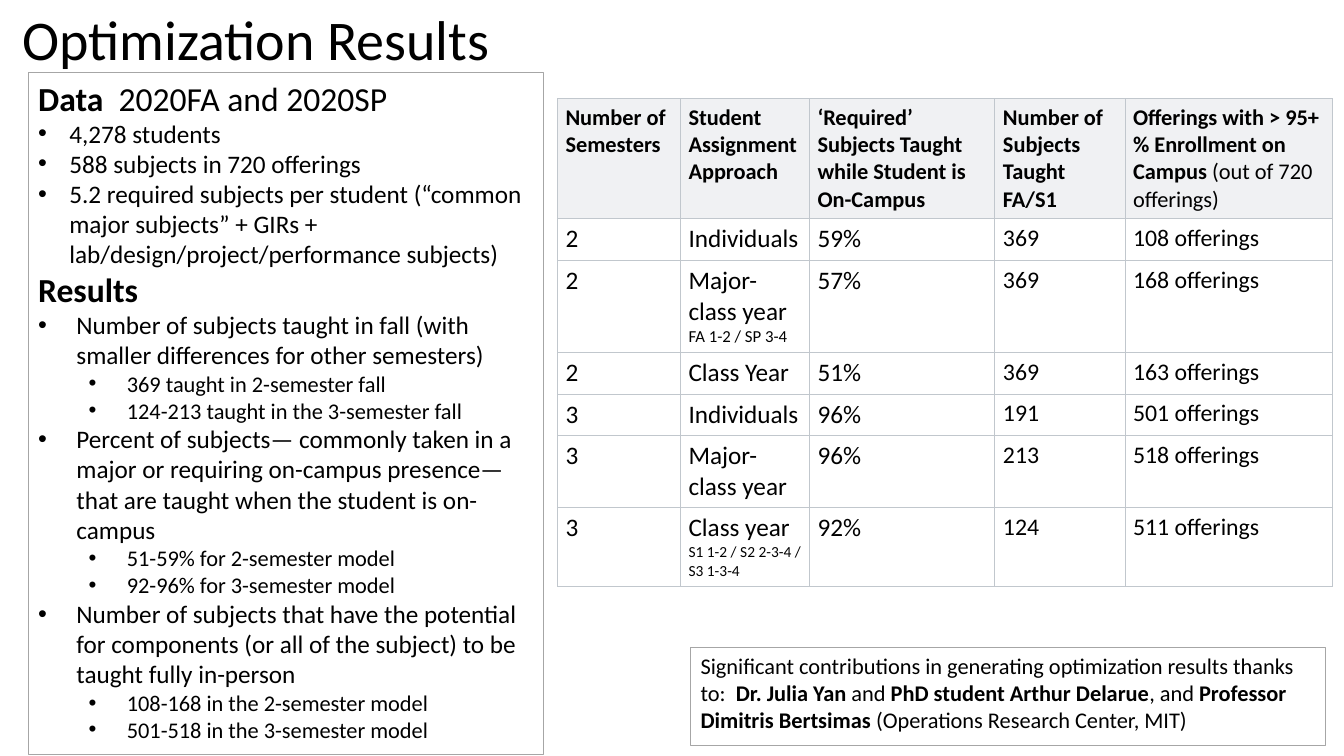
from dataclasses import dataclass

from lxml import etree
from pptx import Presentation
from pptx import util as u
from pptx.dml.color import RGBColor
from pptx.enum import shapes, text
from pptx.oxml import ns

INK = RGBColor(0x00, 0x00, 0x00)
EDGE = RGBColor(0xA6, 0xA6, 0xA6)
RULE = RGBColor(0xC1, 0xC7, 0xCD)
HEAD = RGBColor(0xF0, 0xF1, 0xF3)
FACE = "Calibri"
WIDE, HIGH = u.Inches(13.33), u.Inches(7.5)


@dataclass
class Box:
    """A place on the slide, in percent of its width and height."""
    x: float
    y: float
    w: float
    h: float

    def place(self) -> tuple:
        return across(self.x), down(self.y), across(self.w), down(self.h)


@dataclass
class Line:
    """A paragraph; ** marks switch bold on and off."""
    words: str
    size: float
    indent: float = 0
    hang: float = 0
    level: int = 0


def across(share: float) -> int:
    return round(WIDE * share / 100)


def down(share: float) -> int:
    return round(HIGH * share / 100)


def fact(words: str) -> Line:
    return Line(words, 18, 0.31, 0.31)


def point(words: str) -> Line:
    return Line(words, 18, 0.38, 0.38)


def detail(words: str) -> Line:
    return Line(words, 16, 0.88, 0.38, 1)


def write(frame, lines: list[Line]) -> None:
    frame.word_wrap = True
    for n, line in enumerate(lines):
        para = frame.paragraphs[0] if n == 0 else frame.add_paragraph()
        para.alignment = text.PP_ALIGN.LEFT
        para.level = line.level
        if line.hang:
            props = para._p.get_or_add_pPr()
            props.set("marL", str(u.Inches(line.indent)))
            props.set("indent", str(-u.Inches(line.hang)))
            etree.SubElement(props, ns.qn("a:buFont")).set("typeface", "Arial")
            etree.SubElement(props, ns.qn("a:buChar")).set("char", "•")
        font = para.font
        font.name, font.size = FACE, u.Pt(line.size)
        font.color.rgb = INK
        for k, part in enumerate(line.words.split("**")):
            if part:
                run = para.add_run()
                run.text = part
                run.font.bold = k % 2 == 1


def panel(slide, box: Box, lines: list[Line]) -> None:
    shape = slide.shapes.add_shape(shapes.MSO_SHAPE.RECTANGLE, *box.place())
    shape.shadow.inherit = False
    shape.fill.background()
    shape.line.color.rgb = EDGE
    shape.line.width = u.Pt(0.75)
    shape.text_frame.vertical_anchor = text.MSO_ANCHOR.TOP
    write(shape.text_frame, lines)


def border(cell) -> None:
    props = cell._tc.get_or_add_tcPr()
    for side in ("lnL", "lnR", "lnT", "lnB"):
        edge = etree.SubElement(props, ns.qn(f"a:{side}"), w=str(u.Pt(0.75)))
        fill = etree.SubElement(edge, ns.qn("a:solidFill"))
        etree.SubElement(fill, ns.qn("a:srgbClr")).set("val", str(RULE))


def grid(slide, box: Box, cols: list[float], rows: list[float],
         cells: list[list[list[Line]]]) -> None:
    table = slide.shapes.add_table(len(rows), len(cols), *box.place()).table
    table.first_row = table.horz_banding = False
    for col, share in zip(table.columns, cols):
        col.width = across(share)
    for row, share in zip(table.rows, rows):
        row.height = down(share)
    for r, row in enumerate(cells):
        for c, lines in enumerate(row):
            cell = table.cell(r, c)
            border(cell)
            if r == 0:
                cell.fill.solid()
                cell.fill.fore_color.rgb = HEAD
            else:
                cell.fill.background()
            cell.margin_left = cell.margin_right = u.Inches(0.08)
            cell.margin_top = cell.margin_bottom = u.Inches(0.05)
            write(cell.text_frame, lines)


# Findings on the left
FINDS = [
    Line("**Data  **2020FA and 2020SP", 24),
    fact("4,278 students"),
    fact("588 subjects in 720 offerings"),
    fact("5.2 required subjects per student (“common major subjects” + GIRs + "
         "lab/design/project/performance subjects)"),
    Line("**Results**", 24),
    point("Number of subjects taught in fall (with smaller differences for "
          "other semesters)"),
    detail("369 taught in 2-semester fall"),
    detail("124-213 taught in the 3-semester fall"),
    point("Percent of subjects— commonly taken in a major or requiring "
          "on-campus presence— that are taught when the student is on-campus"),
    detail("51-59% for 2-semester model"),
    detail("92-96% for 3-semester model"),
    point("Number of subjects that have the potential for components (or all "
          "of the subject) to be taught fully in-person"),
    detail("108-168 in the 2-semester model"),
    detail("501-518 in the 3-semester model"),
]

# Table content: semesters, approach, share on campus, fall subjects, offerings
TITLES = [
    "**Number of Semesters**",
    "**Student Assignment Approach**",
    "**‘Required’ Subjects Taught while Student is On-Campus**",
    "**Number of Subjects Taught FA/S1**",
    "**Offerings with > 95+% Enrollment on Campus **(out of 720 offerings)",
]
CASES = [
    (2, [Line("Individuals", 18)], 59, 369, 108),
    (2, [Line("Major-class year", 18), Line("FA 1-2 / SP 3-4", 12)], 57, 369, 168),
    (2, [Line("Class Year", 18)], 51, 369, 163),
    (3, [Line("Individuals", 18)], 96, 191, 501),
    (3, [Line("Major-class year", 18)], 96, 213, 518),
    (3, [Line("Class year", 18), Line("S1 1-2 / S2 2-3-4 / S3 1-3-4", 11)],
     92, 124, 511),
]
CELLS = [[[Line(title, 16)] for title in TITLES]] + [
    [[Line(str(terms), 18)], plan, [Line(f"{share}%", 18)],
     [Line(str(fall), 17)], [Line(f"{offers} offerings", 17)]]
    for terms, plan, share, fall, offers in CASES
]
COLS = [9.15, 9.6, 13.8, 9.68, 15.45]
ROWS = [15.87, 5.5, 12.17, 5.5, 5.5, 9.5, 10.4]

THANKS = Line("Significant contributions in generating optimization results "
              "thanks to:  **Dr. Julia Yan **and **PhD student Arthur "
              "Delarue**, and **Professor Dimitris Bertsimas **(Operations "
              "Research Center, MIT)", 16)


def main() -> None:
    deck = Presentation()
    deck.slide_width, deck.slide_height = WIDE, HIGH
    slide = deck.slides.add_slide(deck.slide_layouts[6])

    grid(slide, Box(41.48, 13.07, sum(COLS), sum(ROWS)), COLS, ROWS, CELLS)
    panel(slide, Box(2.1, 9.6, 38.33, 90.27), FINDS)

    # Title
    title = slide.shapes.add_textbox(*Box(0.15, 0, 99.85, 10).place())
    frame = title.text_frame
    frame.vertical_anchor = text.MSO_ANCHOR.MIDDLE
    frame.margin_left = frame.margin_right = frame.margin_top = u.Inches(0.2)
    frame.margin_bottom = u.Inches(0.1)
    write(frame, [Line("Optimization Results", 40)])
    frame.paragraphs[0].line_spacing = 0.9

    # Credits
    panel(slide, Box(51.39, 85.6, 47.26, 13.07), [THANKS])
    deck.save("out.pptx")


if __name__ == "__main__":
    main()
